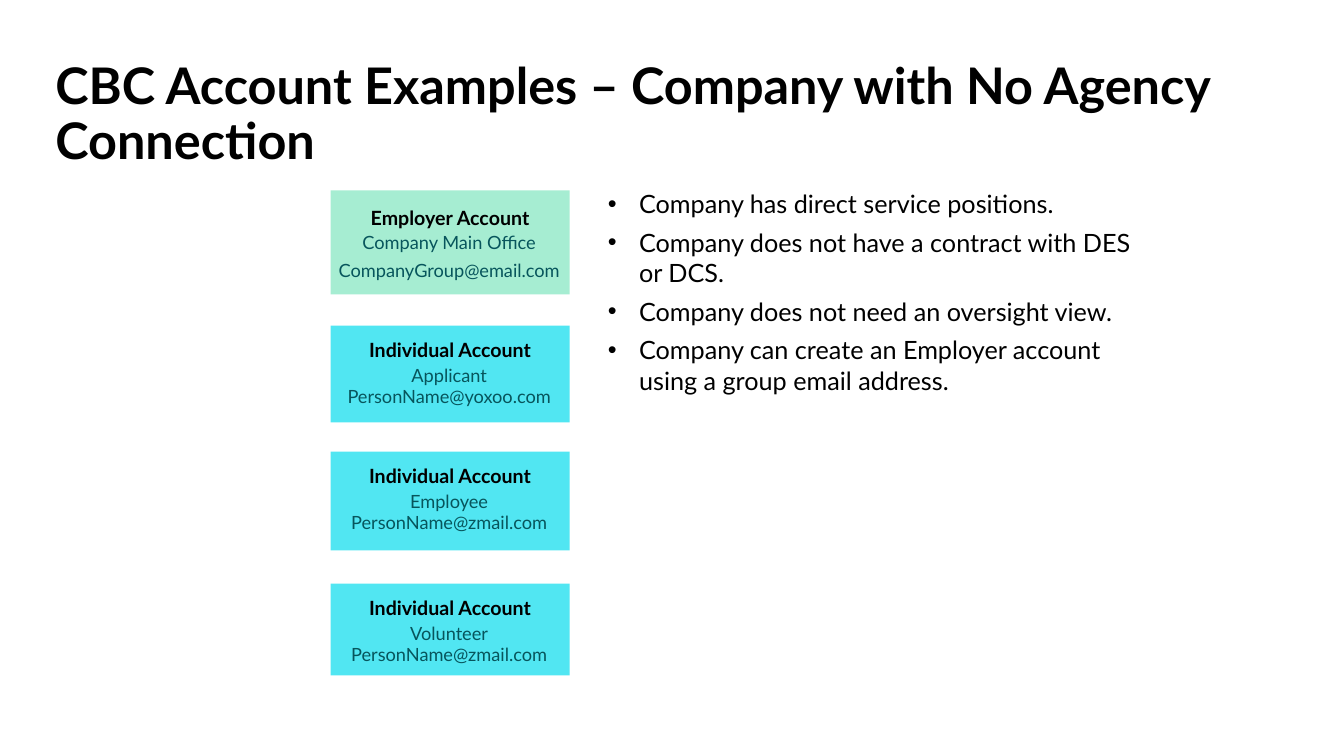
from collections import namedtuple

from lxml import etree
from pptx import Presentation
from pptx.dml.color import RGBColor
from pptx.enum.shapes import MSO_SHAPE as Preset
from pptx.enum.text import MSO_ANCHOR as Anchor, MSO_AUTO_SIZE as AutoSize, PP_ALIGN as Align
from pptx.oxml.ns import qn
from pptx.util import Inches, Pt

BLACK = RGBColor(0x00, 0x00, 0x00)
TEAL = RGBColor(0x07, 0x55, 0x5C)
MINT = RGBColor(0xA6, 0xED, 0xD2)
CYAN = RGBColor(0x51, 0xE6, 0xF2)

WIDTH, HEIGHT = Inches(13.33), Inches(7.5)
Box = namedtuple("Box", "left top width height")

TITLE = {"size": Pt(36), "bold": True}
HEADING = {"size": Pt(14), "bold": True}
DETAIL = {"size": Pt(13)}
BULLET = {"size": Pt(18)}
TIGHT = {"alignment": Align.CENTER, "line_spacing": 0.9, "space_before": Pt(10)}
TIGHT_NEXT = {**TIGHT, "space_before": Pt(6)}
PLAIN = {"alignment": Align.CENTER}

ACCOUNTS = [
    (25.2, 13.73, "Employer Account", "Company Main Office", "CompanyGroup@email.com"),
    (43.07, 12.8, "Individual Account", "Applicant", "PersonName@yoxoo.com"),
    (59.73, 13.07, "Individual Account", "Employee", "PersonName@zmail.com"),
    (77.2, 12.13, "Individual Account", "Volunteer", "PersonName@zmail.com"),
]
POINTS = [
    "Company has direct service positions.",
    "Company does not have a contract with DES or DCS.",
    "Company does not need an oversight view.",
    "Company can create an Employer account using a group email address.",
]


def percent_box(left, top, width, height):
    """Turn percentages of the slide into a box of lengths."""
    return Box(*(int(share * side / 100) for share, side in
                 zip((left, top, width, height), (WIDTH, HEIGHT) * 2)))


def set_values(target, values):
    """Set each attribute named in a dict of values."""
    for name, value in values.items():
        setattr(target, name, value)


def set_frame(shape, insets, anchor=Anchor.TOP):
    """Prepare a wrapping text frame with insets in inches."""
    frame = shape.text_frame
    sides = ("margin_left", "margin_top", "margin_right", "margin_bottom")
    set_values(frame, {"word_wrap": True, "auto_size": AutoSize.NONE, "vertical_anchor": anchor})
    set_values(frame, dict(zip(sides, map(Inches, insets))))
    return frame


def write_lines(frame, lines, font, color=BLACK):
    """Write (text, paragraph format) lines in one font."""
    for index, (text, layout) in enumerate(lines):
        para = frame.add_paragraph() if index else frame.paragraphs[0]
        set_values(para, layout)
        span = para.add_run()
        span.text = text
        set_values(span.font, {"name": "Lato", **font})
        span.font.color.rgb = color


def add_title(page, box):
    """Place the slide title at the bottom of its box."""
    frame = set_frame(page.shapes.add_textbox(*box), (0.1, 0.05, 0.1, 0), Anchor.BOTTOM)
    write_lines(frame, [("CBC Account Examples – Company with No Agency Connection",
                         {"line_spacing": 0.9})], TITLE)


def add_account(page, box, heading, role, address, employer):
    """Place an account card with its heading, role and address."""
    card = page.shapes.add_shape(Preset.RECTANGLE, *box)
    card.shadow.inherit = False
    card.fill.solid()
    card.fill.fore_color.rgb = MINT if employer else CYAN
    card.line.fill.background()
    frame = set_frame(card, (0, 0.18 if employer else 0.15, 0, 0.05))
    write_lines(frame, [(heading, TIGHT)], HEADING)

    offset = Inches(0.38)
    detail = page.shapes.add_textbox(box.left, box.top + offset, box.width - Inches(0.02),
                                     box.height - offset - Inches(0.1))
    frame = set_frame(detail, (0, 0.05 if employer else 0, 0, 0.05))
    layouts = (TIGHT, TIGHT_NEXT) if employer else (PLAIN, PLAIN)
    write_lines(frame, zip((role, address), layouts), DETAIL, TEAL)


def add_points(page, box):
    """Place the bulleted list of company traits."""
    frame = set_frame(page.shapes.add_textbox(*box), (0.1, 0.05, 0.1, 0.05))
    frame.auto_size = AutoSize.SHAPE_TO_FIT_TEXT
    write_lines(frame, [(point, {"space_before": Pt(6)}) for point in POINTS], BULLET)
    indent = Inches(0.31)
    for para in frame.paragraphs:
        properties = para._p.get_or_add_pPr()
        properties.set("marL", str(indent))
        properties.set("indent", str(-indent))
        etree.SubElement(properties, qn("a:buFont")).set("typeface", "Arial")
        etree.SubElement(properties, qn("a:buChar")).set("char", "•")


def main():
    """Build the account examples slide."""
    deck = Presentation()
    set_values(deck, {"slide_width": WIDTH, "slide_height": HEIGHT})
    page = deck.slides.add_slide(deck.slide_layouts[6])
    add_title(page, percent_box(3.38, 8.8, 94.37, 13.73))
    for index, (top, height, *texts) in enumerate(ACCOUNTS):
        add_account(page, percent_box(24.6, top, 17.78, height), *texts, employer=index == 0)
    add_points(page, percent_box(44.49, 24.27, 41.04, 28.93))
    deck.save("out.pptx")


if __name__ == "__main__":
    main()
